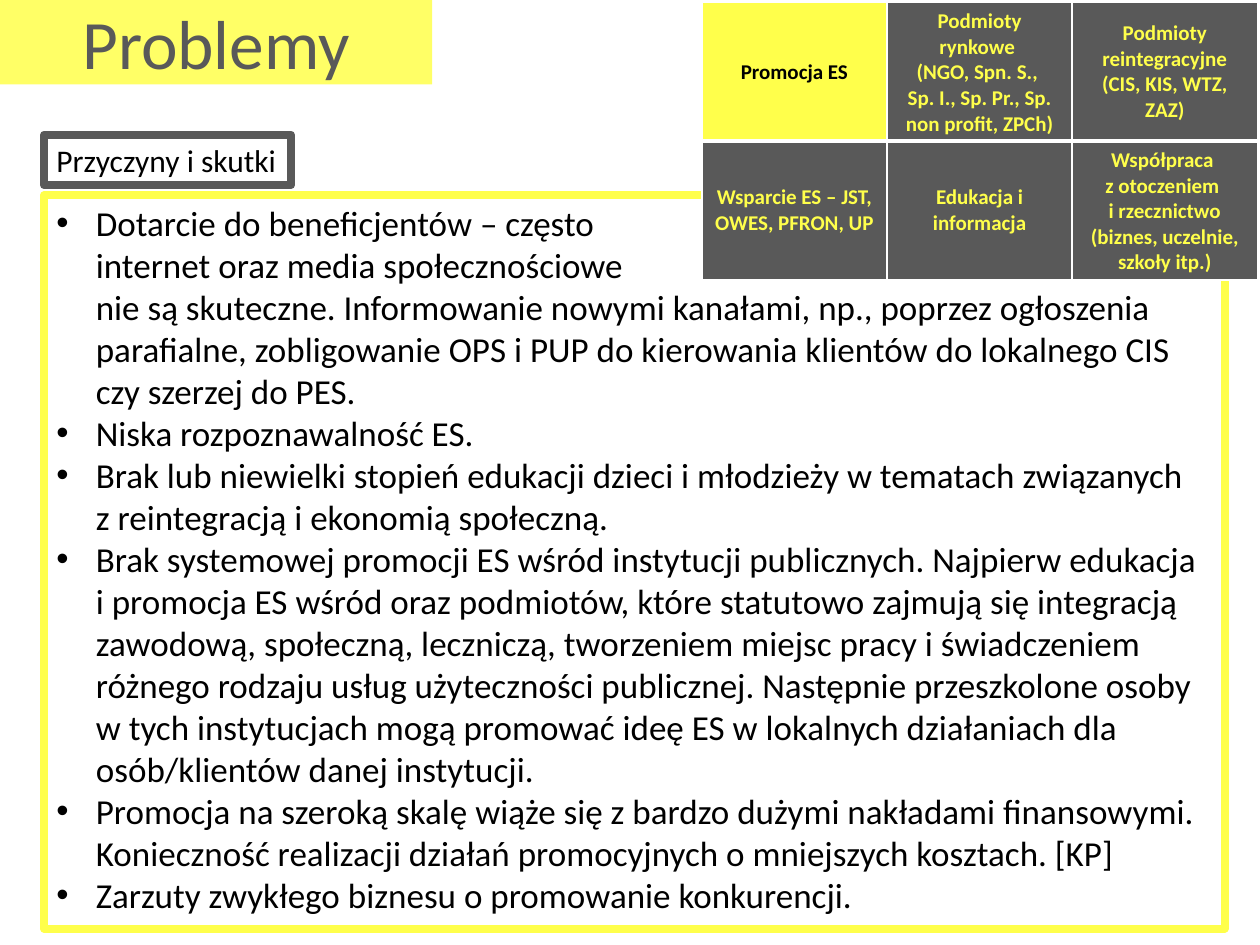
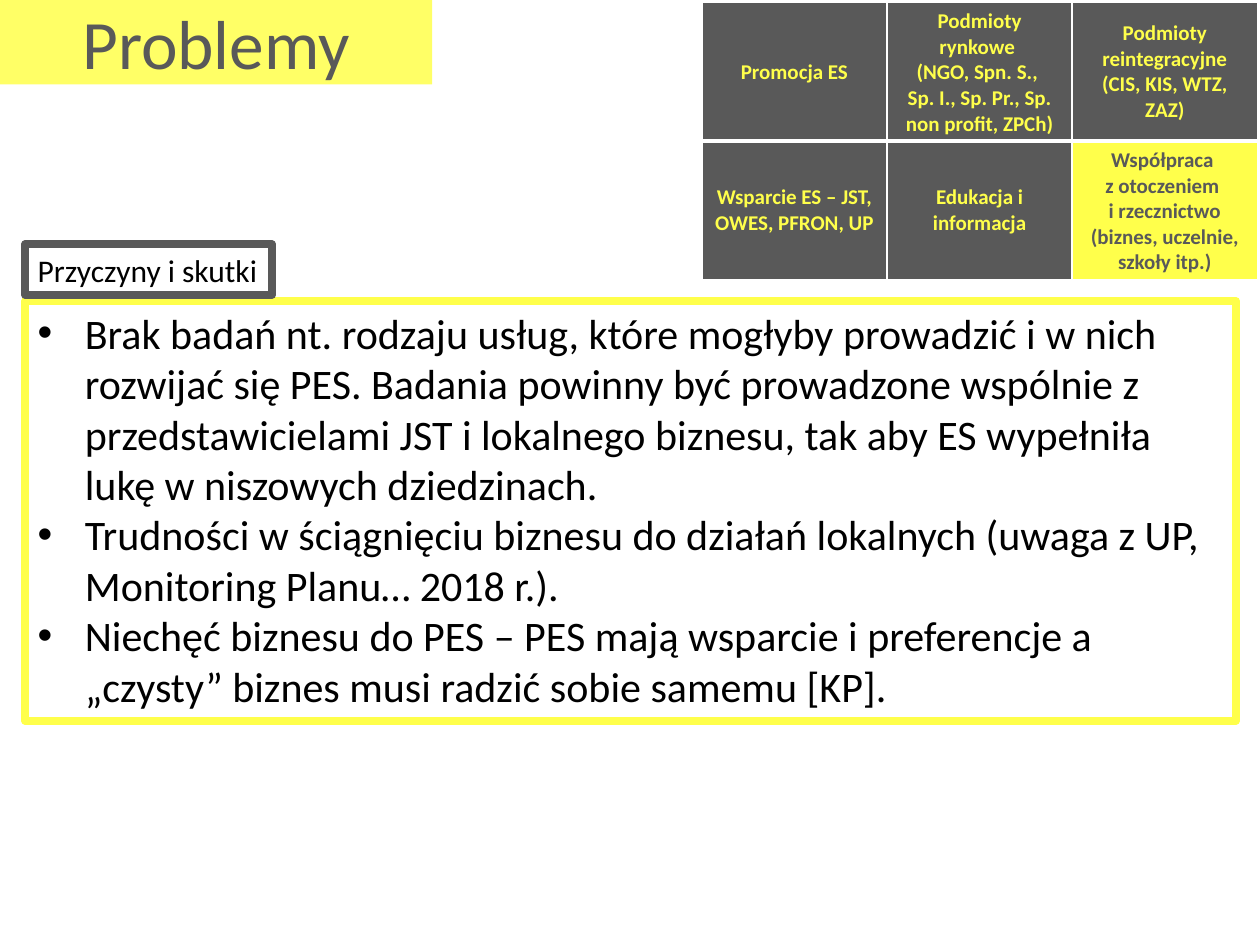
from copy import deepcopy
from dataclasses import dataclass

from lxml import etree
from pptx import Presentation
from pptx.dml.color import RGBColor
from pptx.enum import shapes, text
from pptx.oxml import ns
from pptx.util import Pt


@dataclass(frozen=True)
class Theme:
    font: str = "Calibri"
    black: str = "000000"
    white: str = "FFFFFF"
    grey: str = "595959"
    yellow: str = "FFFF4B"
    title_band: str = "FFFF66"
    title_size: float = 39.6
    tag_size: float = 18
    topic_size: float = 12
    frame_width: float = 4.5


THEME = Theme()

TOPICS = [
    ["Promocja ES",
     "Podmioty rynkowe \n(NGO, Spn. S., \nSp. I., Sp. Pr., Sp. non profit, ZPCh)",
     "Podmioty reintegracyjne (CIS, KIS, WTZ, ZAZ)"],
    ["Wsparcie ES – JST, OWES, PFRON, UP",
     "Edukacja i informacja",
     "Współpraca \nz otoczeniem \ni rzecznictwo (biznes, uczelnie, szkoły itp.)"],
]

PROMOTION_PROBLEMS = [
    "Dotarcie do beneficjentów – często \ninternet oraz media społecznościowe \n"
    "nie są skuteczne. Informowanie nowymi kanałami, np., poprzez ogłoszenia parafialne, "
    "zobligowanie OPS i PUP do kierowania klientów do lokalnego CIS czy szerzej do PES.",
    "Niska rozpoznawalność ES.",
    "Brak lub niewielki stopień edukacji dzieci i młodzieży w tematach związanych \n"
    "z reintegracją i ekonomią społeczną.",
    "Brak systemowej promocji ES wśród instytucji publicznych. Najpierw edukacja \n"
    "i promocja ES wśród oraz podmiotów, które statutowo zajmują się integracją zawodową, "
    "społeczną, leczniczą, tworzeniem miejsc pracy i świadczeniem różnego rodzaju usług "
    "użyteczności publicznej. Następnie przeszkolone osoby w tych instytucjach mogą "
    "promować ideę ES w lokalnych działaniach dla osób/klientów danej instytucji.",
    "Promocja na szeroką skalę wiąże się z bardzo dużymi nakładami finansowymi. "
    "Konieczność realizacji działań promocyjnych o mniejszych kosztach. [KP]",
    "Zarzuty zwykłego biznesu o promowanie konkurencji.",
]

COOPERATION_PROBLEMS = [
    "Brak badań nt. rodzaju usług, które mogłyby prowadzić i w nich rozwijać się PES. "
    "Badania powinny być prowadzone wspólnie z przedstawicielami JST i lokalnego biznesu, "
    "tak aby ES wypełniła lukę w niszowych dziedzinach.",
    "Trudności w ściągnięciu biznesu do działań lokalnych (uwaga z UP, "
    "Monitoring Planu… 2018 r.).",
    "Niechęć biznesu do PES – PES mają wsparcie i preferencje a „czysty” biznes "
    "musi radzić sobie samemu [KP].",
]


def rgb(color):
    return RGBColor.from_string(color)


def add_bullet(paragraph, indent):
    properties = paragraph._p.get_or_add_pPr()
    properties.set("marL", str(Pt(indent)))
    properties.set("indent", str(-Pt(indent)))
    etree.SubElement(properties, ns.qn("a:buFont"), typeface="Arial")
    etree.SubElement(properties, ns.qn("a:buChar"), char="•")


def write_text(frame, paragraphs, size, color=THEME.black, bold=False,
               align=text.PP_ALIGN.LEFT, bullet_indent=None):
    """Fill a text frame; a newline inside a paragraph becomes a line break."""
    for index, content in enumerate(paragraphs):
        paragraph = frame.add_paragraph() if index else frame.paragraphs[0]
        paragraph.text = content
        paragraph.alignment = align
        if bullet_indent:
            add_bullet(paragraph, bullet_indent)
        for run in paragraph.runs:
            run.font.name = THEME.font
            run.font.size = Pt(size)
            run.font.bold = bold
            run.font.color.rgb = rgb(color)
        for line_break in paragraph._p.findall(ns.qn("a:br")):
            line_break.append(deepcopy(paragraph.runs[0]._r.rPr))


def add_title(slide, title):
    band = slide.shapes.add_shape(shapes.MSO_SHAPE.RECTANGLE, 0, 0, Pt(246.96), Pt(48.24))
    band.shadow.inherit = False
    band.fill.solid()
    band.fill.fore_color.rgb = rgb(THEME.title_band)
    band.line.fill.background()
    band.text_frame.vertical_anchor = text.MSO_ANCHOR.MIDDLE
    write_text(band.text_frame, [title], THEME.title_size, THEME.grey,
               align=text.PP_ALIGN.CENTER)


def add_framed_text(slide, paragraphs, left, top, width, height, frame_color,
                    wrap=True, **text_format):
    box = slide.shapes.add_textbox(Pt(left), Pt(top), Pt(width), Pt(height))
    box.line.color.rgb = rgb(frame_color)
    box.line.width = Pt(THEME.frame_width)
    box.text_frame.word_wrap = wrap
    box.text_frame.auto_size = text.MSO_AUTO_SIZE.SHAPE_TO_FIT_TEXT
    write_text(box.text_frame, paragraphs, **text_format)


def set_borders(cell, bottom_width):
    properties = cell._tc.get_or_add_tcPr()
    for side in "LRTB":
        width = bottom_width if side == "B" else 1
        border = etree.SubElement(properties, ns.qn(f"a:ln{side}"), w=str(Pt(width)))
        fill = etree.SubElement(border, ns.qn("a:solidFill"))
        etree.SubElement(fill, ns.qn("a:srgbClr"), val=THEME.white)


def add_topic_table(slide, active_topic, active_color):
    """Draw the topic grid with the cell at active_topic (row, column) highlighted."""
    column_width, row_height = 105.84, 79.2
    row_count, column_count = len(TOPICS), len(TOPICS[0])
    table = slide.shapes.add_table(
        row_count, column_count, Pt(401.04), Pt(1.44),
        Pt(column_width * column_count), Pt(row_height * row_count)).table
    table.first_row = table.horz_banding = False
    for row_index, topics in enumerate(TOPICS):
        for column_index, topic in enumerate(topics):
            active = (row_index, column_index) == active_topic
            cell = table.cell(row_index, column_index)
            set_borders(cell, bottom_width=1 if row_index else 3)
            cell.fill.solid()
            cell.fill.fore_color.rgb = rgb(THEME.yellow if active else THEME.grey)
            cell.vertical_anchor = text.MSO_ANCHOR.MIDDLE
            write_text(cell.text_frame, [topic], THEME.topic_size,
                       active_color if active else THEME.yellow,
                       bold=True, align=text.PP_ALIGN.CENTER)


def add_problem_slide(presentation, problems, left, tag_top, top, width, height,
                      size, indent, active_topic, active_color):
    slide = presentation.slides.add_slide(presentation.slide_layouts[6])
    add_title(slide, "Problemy")
    add_framed_text(slide, problems, left, top, width, height, THEME.yellow,
                    size=size, bullet_indent=indent)
    add_topic_table(slide, active_topic, active_color)
    add_framed_text(slide, ["Przyczyny i skutki"], left, tag_top, 141.12, 28.8,
                    THEME.grey, wrap=False, size=THEME.tag_size)


def main():
    presentation = Presentation()
    presentation.slide_width, presentation.slide_height = Pt(720), Pt(540)
    add_problem_slide(presentation, PROMOTION_PROBLEMS, left=25.2, tag_top=77.04,
                      top=111.6, width=674.64, height=419.04, size=20, indent=22.5,
                      active_topic=(0, 0), active_color=THEME.black)
    add_problem_slide(presentation, COOPERATION_PROBLEMS, left=14.4, tag_top=139.68,
                      top=172.08, width=691.92, height=239.76, size=24, indent=27,
                      active_topic=(1, 2), active_color=THEME.grey)
    presentation.save("out.pptx")


if __name__ == "__main__":
    main()
